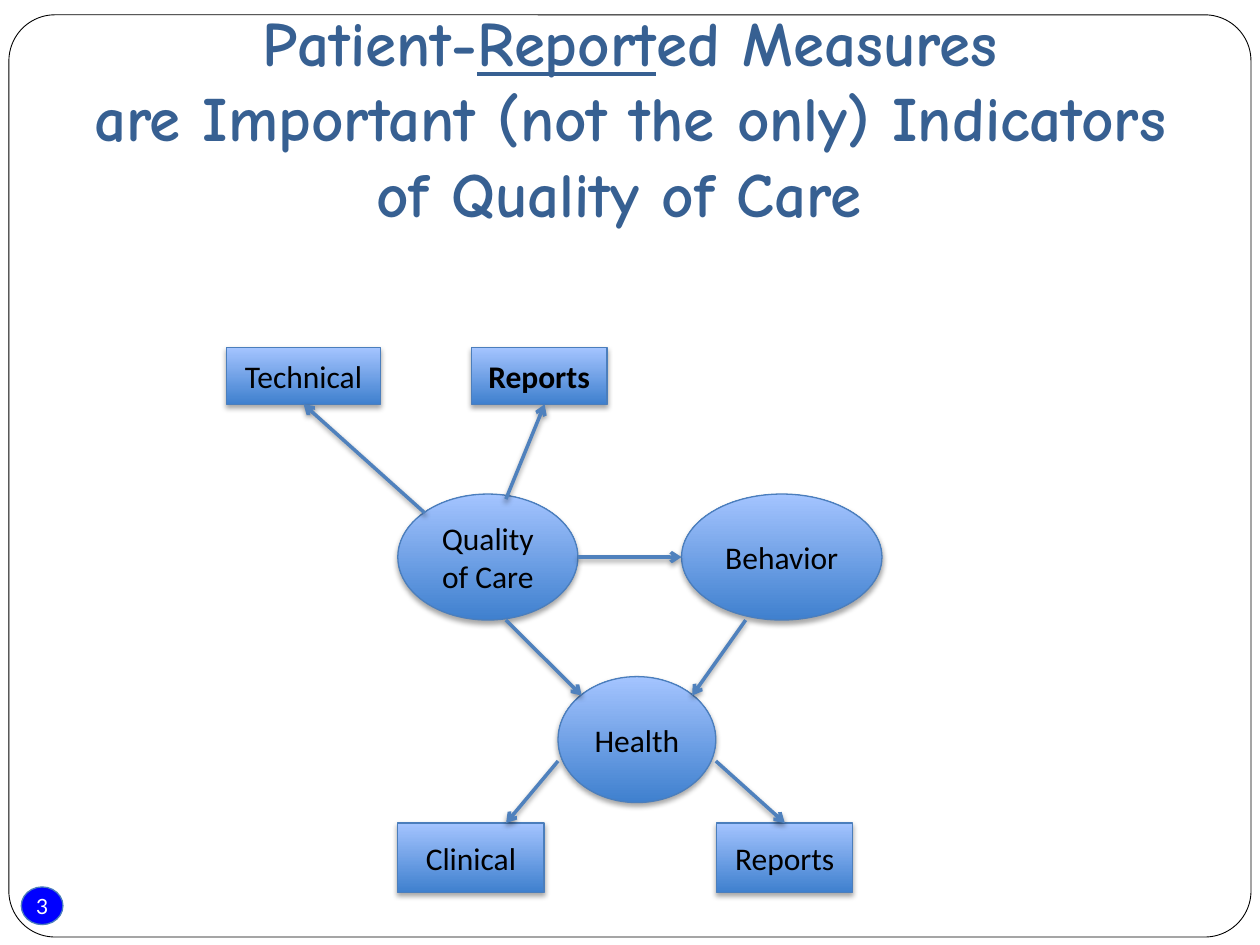
from lxml import etree
from pptx import Presentation
from pptx.dml.color import RGBColor
from pptx.enum.shapes import MSO_CONNECTOR, MSO_SHAPE
from pptx.enum.text import MSO_ANCHOR, PP_ALIGN
from pptx.oxml.ns import qn
from pptx.util import Cm, Pt

BLACK = RGBColor(0x00, 0x00, 0x00)
WHITE = RGBColor(0xFF, 0xFF, 0xFF)
BADGE_BLUE = RGBColor(0x00, 0x00, 0xFF)
TITLE_BLUE = RGBColor(0x37, 0x60, 0x92)
OUTLINE_BLUE = RGBColor(0x4B, 0x7E, 0xBC)
ARROW_BLUE = RGBColor(0x4F, 0x81, 0xBD)
GRADIENT = RGBColor(0x3F, 0x80, 0xCE), RGBColor(0xA4, 0xC4, 0xFF)

RECT, OVAL = MSO_SHAPE.RECTANGLE, MSO_SHAPE.OVAL

NODES = {
    "health": (OVAL, "Health", False, 6.68, 6.63, 3.18, 2.54),
    "behavior": (OVAL, "Behavior", False, 9.17, 2.95, 4.04, 2.54),
    "quality": (OVAL, "Quality of Care", False, 3.45, 2.95, 3.63, 2.54),
    "technical": (RECT, "Technical", False, 0, 0, 3.1, 1.14),
    "care reports": (RECT, "Reports", True, 4.93, 0, 2.74, 1.14),
    "clinical": (RECT, "Clinical", False, 3.45, 9.58, 2.95, 1.4),
    "health reports": (RECT, "Reports", False, 9.88, 9.58, 2.74, 1.4),
}

ARROWS = [
    ("quality", (1, 0.5), "behavior", (0, 0.5)),
    ("quality", (0.6, 1), "health", (0.15, 0.15)),
    ("behavior", (0.32, 1), "health", (0.85, 0.15)),
    ("quality", (0.6, 0.04), "care reports", (0.54, 1)),
    ("quality", (0.15, 0.15), "technical", (0.5, 1)),
    ("health", (0, 0.67), "clinical", (0.74, 0)),
    ("health", (1, 0.67), "health reports", (0.5, 0)),
]


def add_shadow(sp, distance, alpha):
    spPr = sp._element.spPr
    effects = spPr.find(qn("a:effectLst"))
    if effects is None:
        effects = etree.SubElement(spPr, qn("a:effectLst"))
    shadow = etree.SubElement(
        effects, qn("a:outerShdw"), blurRad=str(Pt(3.1)), dist=str(Pt(distance)),
        dir="5400000", rotWithShape="0")
    color = etree.SubElement(shadow, qn("a:srgbClr"), val=str(BLACK))
    etree.SubElement(color, qn("a:alpha"), val=str(alpha * 1000))


def add_run(p, text, font, size, color, bold=False, underline=False):
    r = p.add_run()
    r.text = text
    r.font.name, r.font.size = font, Pt(size)
    r.font.bold, r.font.underline = bold, underline
    r.font.color.rgb = color


def add_outlined(s, kind, box, color, width):
    sp = s.shapes.add_shape(kind, *map(Cm, box))
    sp.shadow.inherit = False
    sp.line.color.rgb = color
    sp.line.width = Pt(width)
    tf = sp.text_frame
    tf.word_wrap = True
    tf.vertical_anchor = MSO_ANCHOR.MIDDLE
    tf.paragraphs[0].alignment = PP_ALIGN.CENTER
    return sp


def add_frame(s, x, y, w, h):
    badge = add_outlined(s, OVAL, (x + 0.25, y + 17.58, 0.84, 0.76), OUTLINE_BLUE, 0.75)
    badge.fill.solid()
    badge.fill.fore_color.rgb = BADGE_BLUE
    tf = badge.text_frame
    tf.margin_left = tf.margin_right = tf.margin_top = tf.margin_bottom = 0
    add_run(tf.paragraphs[0], "3", "Lato", 12, WHITE)

    border = add_outlined(s, MSO_SHAPE.ROUNDED_RECTANGLE, (x, y, w, h), BLACK, 0.5)
    border.adjustments[0] = 0.05
    border.fill.background()


def add_title(s, x, y, w, h):
    title = s.shapes.title
    title.left, title.top, title.width, title.height = map(Cm, (x, y, w, h))
    tf = title.text_frame
    tf.word_wrap = True
    tf.vertical_anchor = MSO_ANCHOR.MIDDLE
    p = tf.paragraphs[0]
    p.alignment = PP_ALIGN.CENTER
    style = "Comic Neue", 36, TITLE_BLUE, True
    add_run(p, "Patient-", *style)
    add_run(p, "Report", *style, underline=True)
    add_run(p, "ed Measures", *style)
    p.add_line_break()
    add_run(p, "are Important (not the only) Indicators of Quality of Care ", *style)


def add_node(s, kind, text, bold, box):
    sp = add_outlined(s, kind, box, OUTLINE_BLUE, 0.75)
    sp.fill.gradient()
    sp.fill.gradient_angle = 90
    for stop, position, color in zip(sp.fill.gradient_stops, (0, 1), GRADIENT):
        stop.position = position
        stop.color.rgb = color
    add_shadow(sp, 1.8, 35)
    add_run(sp.text_frame.paragraphs[0], text, "Calibri", 18, BLACK, bold)
    return sp


def point_on(sp, fraction):
    fx, fy = fraction
    return round(sp.left + fx * sp.width), round(sp.top + fy * sp.height)


def add_arrow(s, start, end):
    arrow = s.shapes.add_connector(MSO_CONNECTOR.STRAIGHT, *start, *end)
    arrow.line.color.rgb = ARROW_BLUE
    arrow.line.width = Pt(2)
    etree.SubElement(arrow.line._get_or_add_ln(), qn("a:tailEnd"), type="arrow")
    add_shadow(arrow, 1.6, 38)


def add_diagram(s, x, y):
    nodes = {}
    for name, (kind, text, bold, dx, dy, w, h) in NODES.items():
        nodes[name] = add_node(s, kind, text, bold, (x + dx, y + dy, w, h))
    for source, start, target, end in ARROWS:
        add_arrow(s, point_on(nodes[source], start), point_on(nodes[target], end))


def main():
    prs = Presentation()
    prs.slide_width, prs.slide_height = Cm(25.4), Cm(19.05)
    s = prs.slides.add_slide(prs.slide_layouts[5])
    add_frame(s, 0.18, 0.3, 25.04, 18.59)
    add_title(s, 1.27, 0.76, 22.86, 3.18)
    add_diagram(s, 4.57, 7.01)
    prs.save("out.pptx")


if __name__ == "__main__":
    main()
